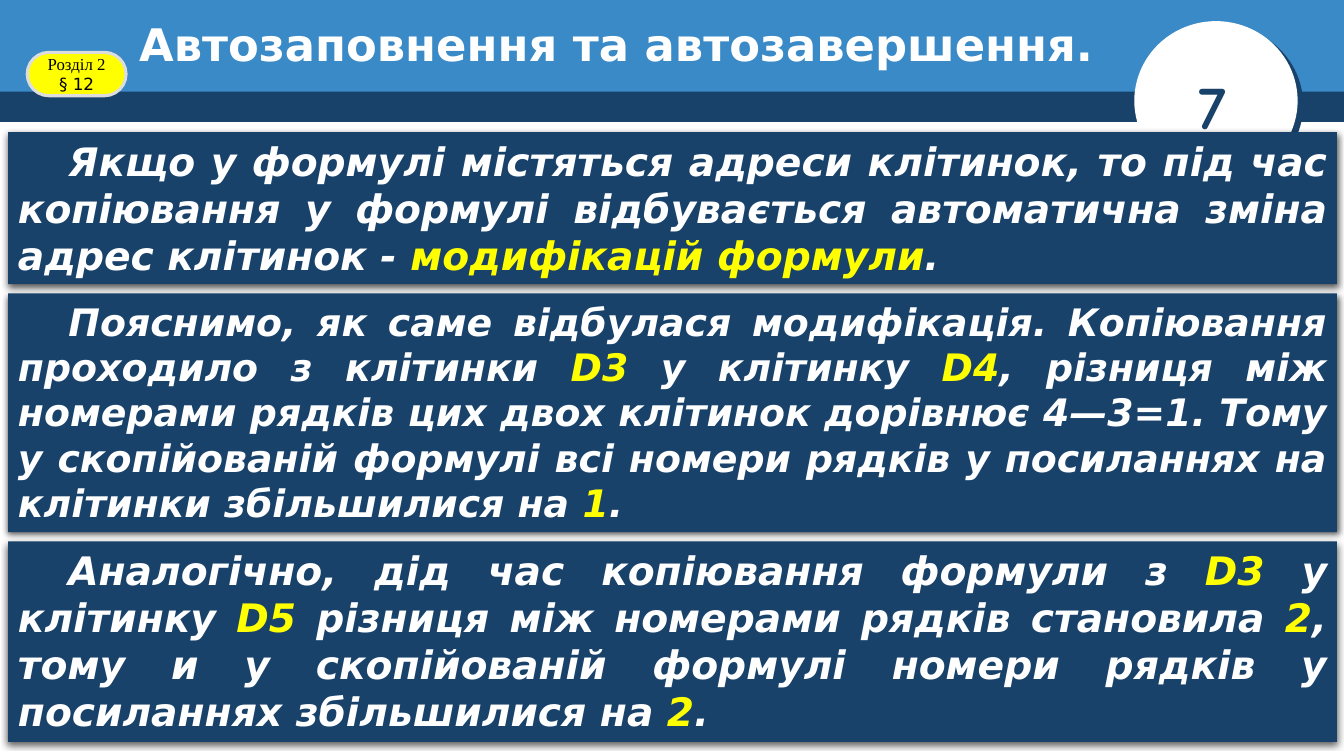
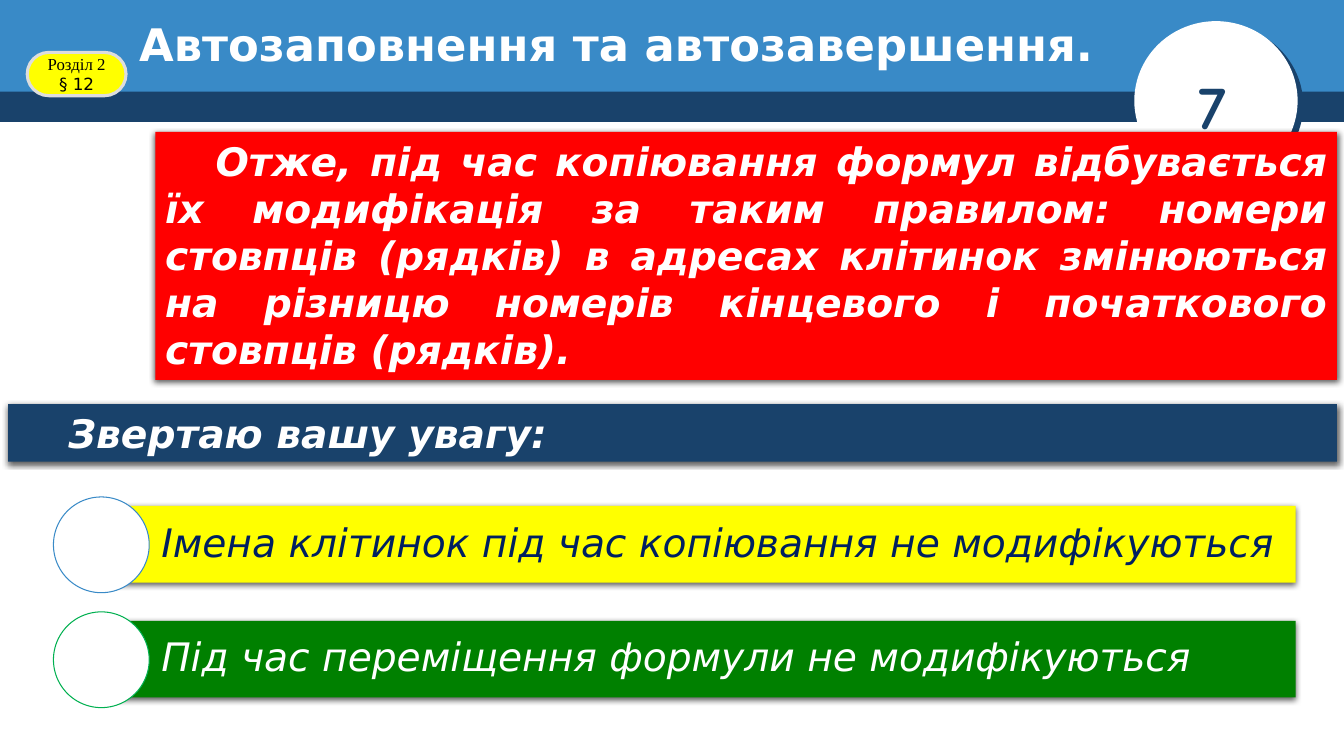
import pptx
import pptx.util
import pptx.dml.color
import pptx.enum.shapes
import pptx.enum.text
import pptx.oxml
import pptx.oxml.ns

Inches = pptx.util.Inches
Pt = pptx.util.Pt
SHAPE = pptx.enum.shapes.MSO_SHAPE
ALIGN = pptx.enum.text.PP_ALIGN
ANCHOR = pptx.enum.text.MSO_ANCHOR

# Shared look
NAVY, BLUE, WHITE, BLACK = "19426B", "398AC7", "FFFFFF", "000000"
YELLOW, RED, GREEN, INK = "FFFF00", "FF0000", "008000", "002060"
FONT = "DejaVu Sans"
TITLE = "Автозаповнення та автозавершення."
TEXT_INSETS = (0.1, 0.05, 0.1, 0.05)
SOFT_SHADOW = (BLACK, 63, 4.5, 1.5, 90)
DISC_SHADOW = (NAVY, 100, 0, 5, 37)
PANEL_LEFT, PANEL_RIGHT = 0.08, 13.26


def rgb(value):
    return pptx.dml.color.RGBColor.from_string(value)


def add_shadow(shape, color, opacity, blur, distance, angle):
    """Give a shape an outer shadow; blur and distance are in points."""
    effects = pptx.oxml.parse_xml(
        f'<a:effectLst {pptx.oxml.ns.nsdecls("a")}>'
        f'<a:outerShdw blurRad="{Pt(blur)}" dist="{Pt(distance)}" '
        f'dir="{angle * 60000}" algn="ctr" rotWithShape="0">'
        f'<a:srgbClr val="{color}"><a:alpha val="{opacity * 1000}"/></a:srgbClr>'
        '</a:outerShdw></a:effectLst>')
    properties = shape.element.spPr
    properties.replace(properties.find(pptx.oxml.ns.qn("a:effectLst")), effects)


def add_box(slide, kind, place, fill, line=None, shadow=None):
    box = slide.shapes.add_shape(kind, *map(Inches, place))
    box.shadow.inherit = False
    box.fill.solid()
    box.fill.fore_color.rgb = rgb(fill)
    if line:
        color, width = line
        box.line.color.rgb = rgb(color)
        box.line.width = Pt(width)
    else:
        box.line.fill.background()
    if shadow:
        add_shadow(box, *shadow)
    return box


def set_frame(shape, anchor, insets=TEXT_INSETS):
    frame = shape.text_frame
    frame.word_wrap = True
    frame.auto_size = pptx.enum.text.MSO_AUTO_SIZE.NONE
    frame.vertical_anchor = anchor
    (frame.margin_left, frame.margin_top,
     frame.margin_right, frame.margin_bottom) = map(Inches, insets)


def first_para(shape, align=ALIGN.LEFT, spacing=1.0):
    para = shape.text_frame.paragraphs[0]
    para.alignment = align
    para.line_spacing = spacing
    return para


def add_span(para, text, size, color, font=FONT, bold=False, italic=False):
    span = para.add_run()
    span.text = text
    span.font.name = font
    span.font.size = Pt(size)
    span.font.color.rgb = rgb(color)
    span.font.bold = bold
    span.font.italic = italic


def add_header(slide):
    """Bands and the disc with the class number."""
    add_box(slide, SHAPE.RECTANGLE, (0, 0.87, 13.33, 0.34), NAVY)
    add_box(slide, SHAPE.RECTANGLE, (0, 0, 13.33, 0.91), BLUE)
    add_box(slide, SHAPE.OVAL, (11.25, 0.21, 1.62, 1.58), WHITE, shadow=DISC_SHADOW)
    number = slide.shapes.add_textbox(*map(Inches, (11.79, 0.62, 0.83, 0.84)))
    set_frame(number, ANCHOR.TOP)
    add_span(first_para(number), "7", 44, NAVY, "Comic Neue", bold=True)


def prepare_layout(layout, slide):
    """Draw the header through a slide, then keep it in the layout."""
    title = layout.placeholders[0]
    title.left, title.top, title.width, title.height = map(
        Inches, (1.28, 0.18, 9.9, 0.58))
    set_frame(title, ANCHOR.MIDDLE)
    add_header(slide)
    parts = [shape for shape in slide.shapes if not shape.is_placeholder]
    for number, part in enumerate(parts, start=100):
        part.element.xpath(".//p:cNvPr")[0].set("id", str(number))
        layout.shapes.element.append(part.element)


def add_title(slide):
    para = first_para(slide.shapes.title, spacing=0.9)
    add_span(para, TITLE, 32, WHITE, bold=True)


def add_chapter_badge(slide):
    badge = add_box(slide, SHAPE.ROUNDED_RECTANGLE, (0.27, 0.52, 0.98, 0.43),
                    YELLOW, line=("DDDDDD", 2.25))
    badge.adjustments[0] = 0.5
    set_frame(badge, ANCHOR.MIDDLE)
    para = first_para(badge, ALIGN.CENTER)
    add_span(para, "Розділ 2 ", 12, BLACK, "Times New Roman")
    add_span(para, "§ 12", 12, BLACK)


def add_panel(slide, top, height, texts, fill=NAVY, left=PANEL_LEFT, size=28):
    """Justified panel; every second text is highlighted."""
    panel = add_box(slide, SHAPE.RECTANGLE, (left, top, PANEL_RIGHT - left, height),
                    fill, shadow=SOFT_SHADOW)
    set_frame(panel, ANCHOR.TOP)
    para = first_para(panel, ALIGN.JUSTIFY)
    indents = para._p.get_or_add_pPr()
    indents.set("marL", "0")
    indents.set("indent", str(Inches(0.5)))
    for index, text in enumerate(texts):
        color = YELLOW if index % 2 else WHITE
        add_span(para, text, size, color, bold=True, italic=True)


def add_note(slide, top, text, fill, color, ring):
    """Coloured bar with a ringed disc at its left end."""
    bar = add_box(slide, SHAPE.RECTANGLE, (1, top, 11.85, 0.76), fill,
                  shadow=SOFT_SHADOW)
    set_frame(bar, ANCHOR.MIDDLE, (0.6, 0.08, 0.08, 0.08))
    add_span(first_para(bar, spacing=0.9), text, 28, color, italic=True)
    add_box(slide, SHAPE.OVAL, (0.53, top - 0.09, 0.95, 0.95), WHITE,
            line=(ring, 0.75))


def fill_explanation(slide):
    add_panel(slide, 1.31, 1.51, [
        "Якщо у формулі містяться адреси клітинок, то під час копіювання у "
        "формулі відбувається автоматична зміна адрес клітинок - ",
        "модифікацій формули", "."])
    add_panel(slide, 2.91, 2.37, [
        "Пояснимо, як саме відбулася модифікація. Копіювання проходило з клітинки ",
        "D3", " у клітинку ", "D4",
        ", різниця між номерами рядків цих двох клітинок дорівнює 4—3=1. Тому у "
        "скопійованій формулі всі номери рядків у посиланнях на клітинки "
        "збільшилися на ", "1", "."], size=27)
    add_panel(slide, 5.37, 1.99, [
        "Аналогічно, дід час копіювання формули з ", "D3", " у клітинку ", "D5",
        " різниця між номерами рядків становила ", "2",
        ", тому и у скопійованій формулі номери рядків у посиланнях "
        "збільшилися на ", "2", "."])


def fill_rule(slide):
    add_panel(slide, 1.31, 2.46, [
        "Отже, під час копіювання формул відбувається їх модифікація за таким "
        "правилом: номери стовпців (рядків) в адресах клітинок змінюються на "
        "різницю номерів кінцевого і початкового стовпців (рядків)."],
        fill=RED, left=1.54)
    add_panel(slide, 4.01, 0.57, ["Звертаю вашу увагу:"])
    notes = [
        ("Імена клітинок під час копіювання не модифікуються", YELLOW, INK, BLUE),
        ("Під час переміщення формули не модифікуються", GREEN, WHITE, "00B050"),
    ]
    for index, note in enumerate(notes):
        add_note(slide, 5.02 + 1.14 * index, *note)


def main():
    deck = pptx.Presentation()
    deck.slide_width, deck.slide_height = Inches(13.33), Inches(7.5)
    layout = deck.slide_layouts.get_by_name("Title Only")
    slides = [deck.slides.add_slide(layout) for _ in range(2)]
    prepare_layout(layout, slides[0])
    for slide, fill_content in zip(slides, (fill_explanation, fill_rule)):
        add_title(slide)
        add_chapter_badge(slide)
        fill_content(slide)
    deck.save("out.pptx")


if __name__ == "__main__":
    main()
